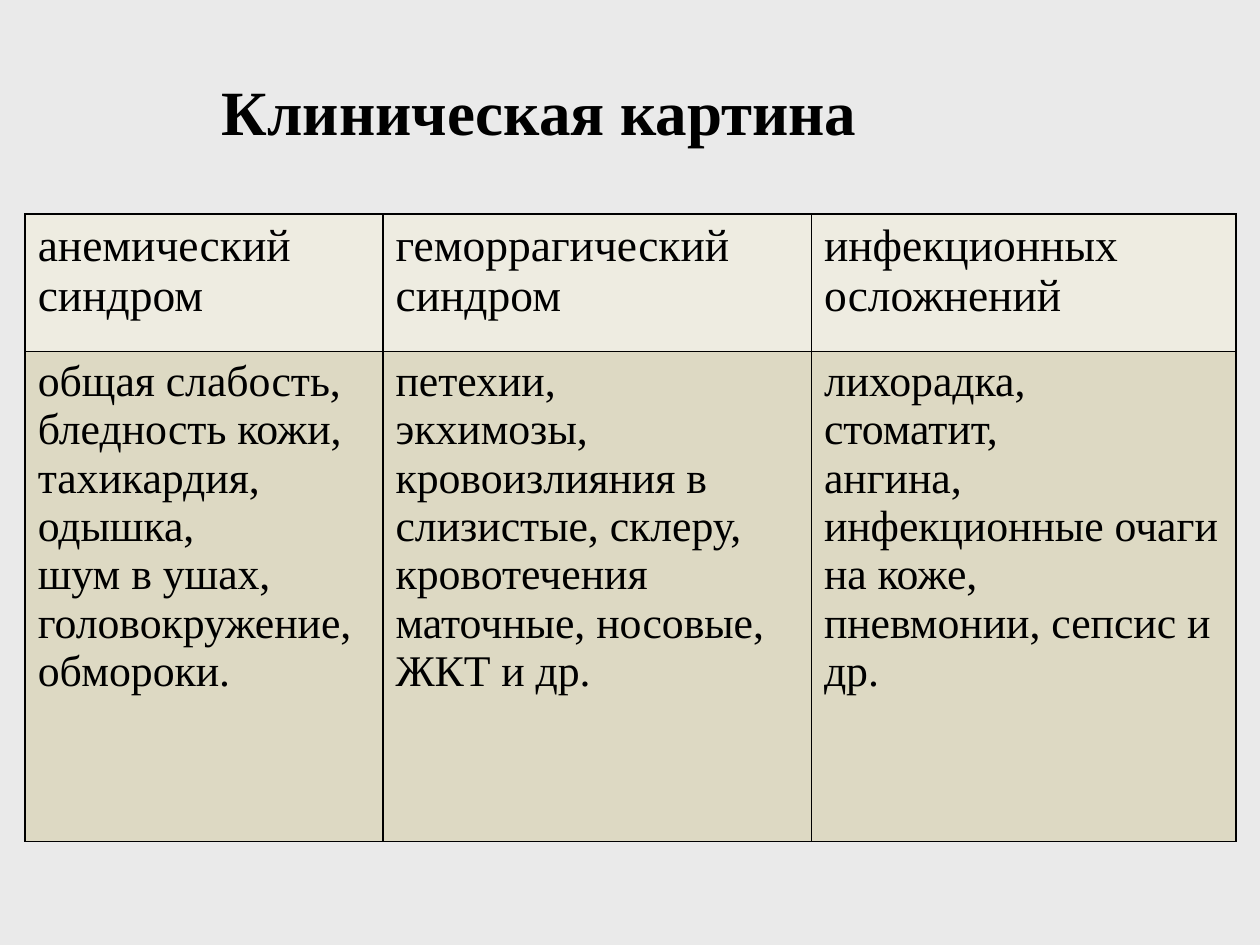
from pptx import Presentation
from pptx.dml.color import RGBColor
from pptx.enum.text import MSO_ANCHOR, PP_ALIGN
from pptx.oxml import parse_xml
from pptx.oxml.ns import nsdecls
from pptx.util import Inches, Pt

BACKGROUND = RGBColor(0xEA, 0xEA, 0xEA)
HEADER_FILL = RGBColor(0xEE, 0xEC, 0xE1)
BODY_FILL = RGBColor(0xDD, 0xD9, 0xC3)
BLACK = RGBColor(0, 0, 0)
FONT = "Times New Roman"

COLUMN_WIDTHS = [2.84, 3.4, 3.37]
ROW_HEIGHTS = [1.09, 3.89]
ROW_STYLES = [(HEADER_FILL, 26), (BODY_FILL, 25)]
SYNDROMES = [
    [["анемический синдром"], ["геморрагический синдром"], ["инфекционных осложнений"]],
    [
        ["общая слабость,", "бледность кожи,", "тахикардия,", "одышка,",
         "шум в ушах,", "головокружение, обмороки."],
        ["петехии,", "экхимозы,", "кровоизлияния в слизистые, склеру,",
         "кровотечения маточные, носовые, ЖКТ и др."],
        ["лихорадка,", "стоматит,", "ангина,", "инфекционные очаги на коже,",
         "пневмонии, сепсис и др."],
    ],
]


def add_run(paragraph, text, size, bold=False):
    run = paragraph.add_run()
    run.text = text
    run.font.name = FONT
    run.font.size = Pt(size)
    run.font.bold = bold
    run.font.color.rgb = BLACK


def add_borders(cell):
    properties = cell._tc.get_or_add_tcPr()
    for side in ("lnL", "lnR", "lnT", "lnB"):
        properties.append(parse_xml(
            f'<a:{side} {nsdecls("a")} w="{Pt(1)}"><a:solidFill>'
            f'<a:srgbClr val="{BLACK}"/></a:solidFill></a:{side}>'))


presentation = Presentation()
presentation.slide_width = Inches(10)
presentation.slide_height = Inches(7.5)
slide = presentation.slides.add_slide(presentation.slide_layouts[5])
slide.background.fill.solid()
slide.background.fill.fore_color.rgb = BACKGROUND

# Title
title = slide.shapes.title
title.left, title.top = Inches(1.38), Inches(0.44)
title.width, title.height = Inches(5.8), Inches(0.87)
title.text_frame.vertical_anchor = MSO_ANCHOR.MIDDLE
title_paragraph = title.text_frame.paragraphs[0]
title_paragraph.alignment = PP_ALIGN.CENTER
add_run(title_paragraph, "Клиническая картина", 36, bold=True)

# Table of syndromes
table = slide.shapes.add_table(
    len(ROW_HEIGHTS), len(COLUMN_WIDTHS), Inches(0.2), Inches(1.7),
    Inches(sum(COLUMN_WIDTHS)), Inches(sum(ROW_HEIGHTS))).table
table.first_row = False
table.horz_banding = False
for column, width in zip(table.columns, COLUMN_WIDTHS):
    column.width = Inches(width)

for row, height, (fill, size), texts in zip(table.rows, ROW_HEIGHTS, ROW_STYLES, SYNDROMES):
    row.height = Inches(height)
    for cell, lines in zip(row.cells, texts):
        add_borders(cell)
        cell.fill.solid()
        cell.fill.fore_color.rgb = fill
        text_frame = cell.text_frame
        for index, line in enumerate(lines):
            paragraph = text_frame.add_paragraph() if index else text_frame.paragraphs[0]
            add_run(paragraph, line, size)

presentation.save("out.pptx")
